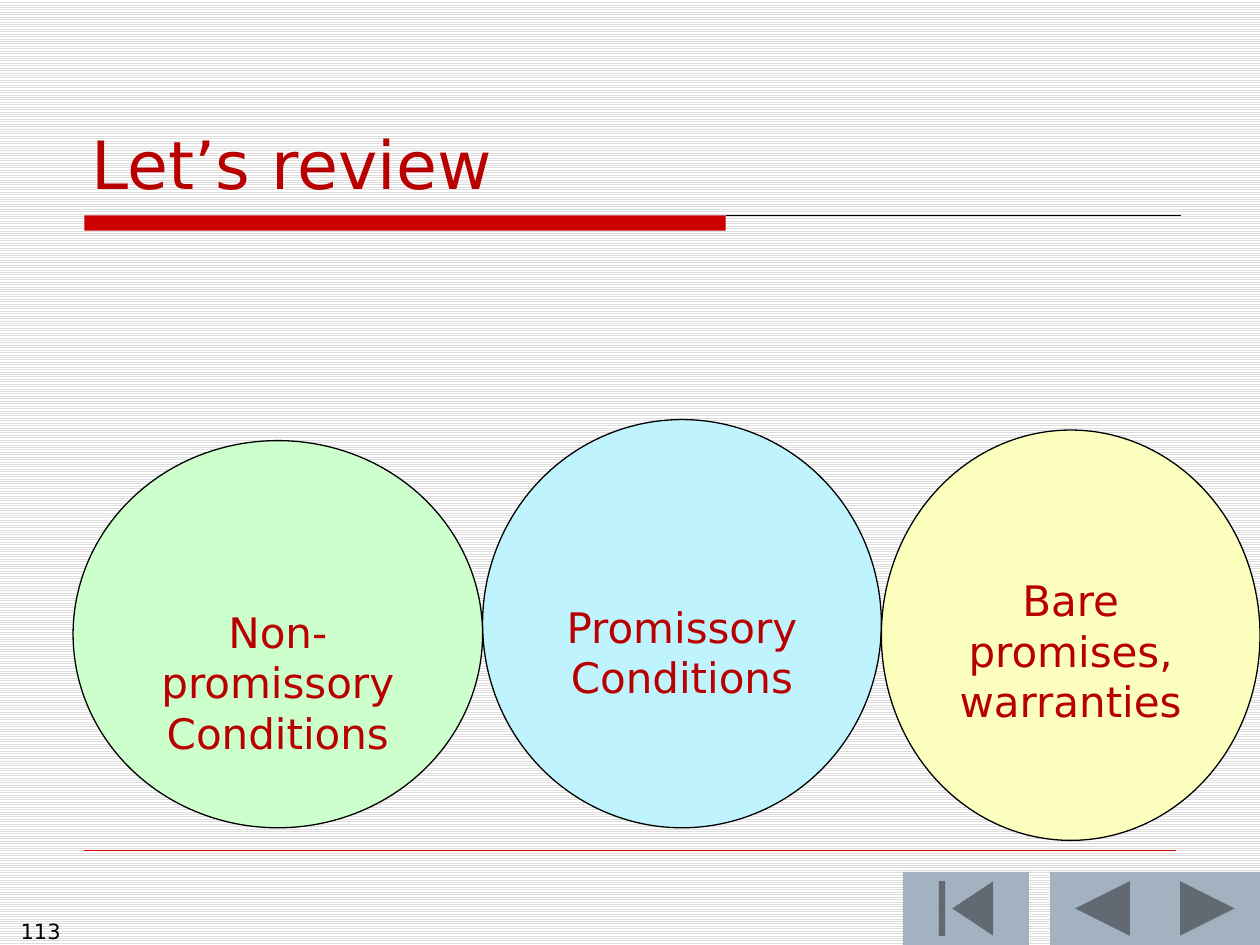
from lxml.etree import SubElement
from pptx import Presentation
from pptx.dml.color import RGBColor
from pptx.enum.dml import MSO_PATTERN as Pattern
from pptx.enum.shapes import MSO_CONNECTOR as Connector, MSO_SHAPE as Shape
from pptx.enum.text import MSO_ANCHOR as Anchor, PP_ALIGN as Align
from pptx.oxml.ns import qn
from pptx.util import Inches, Pt

WIDTH, HEIGHT = 10, 7.5
FONT = "DejaVu Sans"
RED, DARK_RED, BLACK = "CC0000", "B90000", "000000"


def color(value):
    return RGBColor.from_string(value)


def add_figure(page, kind, box, fill, line=None):
    figure = page.shapes.add_shape(kind, *map(Inches, box))
    figure.shadow.inherit = False
    figure.fill.solid()
    figure.fill.fore_color.rgb = color(fill)
    if line:
        figure.line.color.rgb = color(line)
        figure.line.width = Pt(0.75)
    else:
        figure.line.fill.background()
    return figure


def add_rule(page, left, right, top, line, width):
    rule = page.shapes.add_connector(
        Connector.STRAIGHT, *map(Inches, (left, top, right, top)))
    rule.line.color.rgb = color(line)
    rule.line.width = Pt(width)
    SubElement(rule._element.spPr, qn("a:effectLst"))


def write(frame, lines, size, ink, align, anchor):
    frame.word_wrap = True
    frame.vertical_anchor = anchor
    for index, words in enumerate(lines):
        para = frame.add_paragraph() if index else frame.paragraphs[0]
        para.alignment = align
        span = para.add_run()
        span.text = words
        span.font.name = FONT
        span.font.size = Pt(size)
        span.font.color.rgb = color(ink)


def add_label(page, box, words, size, ink, align, anchor):
    label = page.shapes.add_textbox(*map(Inches, box))
    write(label.text_frame, [words], size, ink, align, anchor)


def add_heading(page, box):
    left, top, width, height = box
    add_label(page, (left - 0.04, top, width + 0.05, height), "Let’s review",
              38, DARK_RED, Align.LEFT, Anchor.BOTTOM)
    bottom = top + height + 0.05
    bar = width * 0.585
    add_figure(page, Shape.RECTANGLE, (left, bottom, bar, 0.12), RED)
    add_rule(page, left + bar, left + width, bottom, BLACK, 0.75)


def add_circles(page, box):
    left, top, width, height = box
    circles = [
        (0.274, 0, 0.336, 3.25, "BFF3FD", 0.44, ["Promissory Conditions"]),
        (0, 0.17, 0.345, 3.08, "CCFFCC", 0.76, ["Non-promissory Conditions"]),
    ]
    circles = [
        (0.345, 0, 0.336, 0.97, "BFF3FD", 0.44, ["Promissory Conditions"]),
        (0, 0.05, 0.345, 0.92, "CCFFCC", 0.76, ["Non-promissory Conditions"]),
        (0.681, 0.025, 0.319, 0.975, "FCFEBE", 0.24,
         ["Bare promises,", "warranties"]),
    ]
    for x, y, across, down, fill, drop, lines in circles:
        place = (left + x * width, top + y * height,
                 across * width, down * height)
        circle = add_figure(page, Shape.OVAL, place, fill, BLACK)
        write(circle.text_frame, lines, 24, DARK_RED,
              Align.CENTER, Anchor.MIDDLE)
        circle.text_frame.margin_top = Inches(0.05 + drop)


def add_footer(page, box):
    left, top, width, height = box
    add_rule(page, 0.67, 9.33, top - 0.17, RED, 0.25)
    add_label(page, (left, top + 0.32, 0.58, 0.26), "113",
              12, BLACK, Align.RIGHT, Anchor.TOP)
    step = width / 12
    buttons = [
        (Shape.ACTION_BUTTON_BACK_OR_PREVIOUS, 10, 1),
        (Shape.ACTION_BUTTON_BEGINNING, 8.6, 1.2),
        (Shape.ACTION_BUTTON_FORWARD_OR_NEXT, 11, 1),
    ]
    for kind, column, span in buttons:
        place = (left + column * step, top, span * step, height)
        add_figure(page, kind, place, "A3B2C1")


def main():
    deck = Presentation()
    deck.slide_width, deck.slide_height = Inches(WIDTH), Inches(HEIGHT)
    page = deck.slides.add_slide(deck.slide_layouts[6])
    backdrop = page.background.fill
    backdrop.patterned()
    backdrop.pattern = Pattern.LIGHT_HORIZONTAL
    backdrop.fore_color.rgb = color("DDDDDD")
    backdrop.back_color.rgb = color("FFFFFF")
    add_heading(page, (0.67, 0.33, 8.7, 1.33))
    add_footer(page, (0, 6.92, WIDTH, 0.58))
    add_circles(page, (0.58, 3.33, 9.42, 3.34))
    deck.save("out.pptx")


if __name__ == "__main__":
    main()
